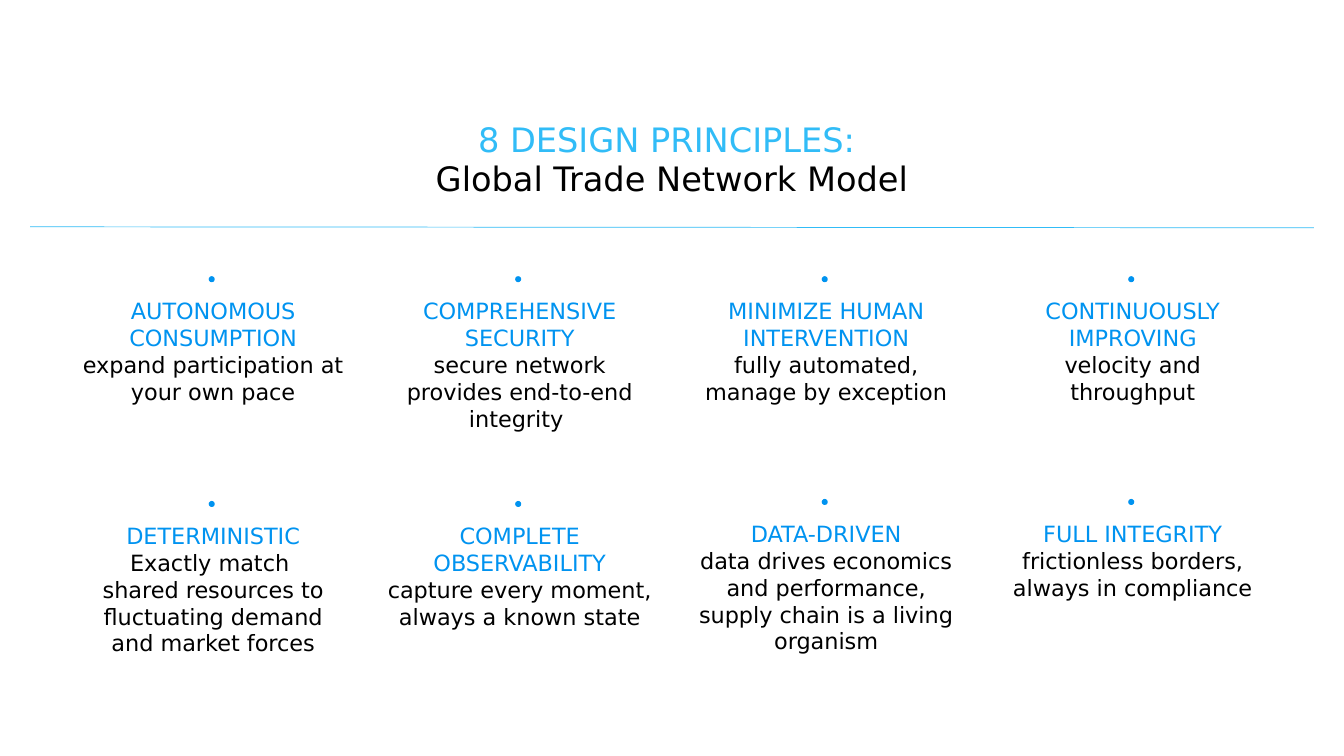
import pptx
import pptx.dml.color
import pptx.enum.shapes
import pptx.enum.text
import pptx.oxml.ns
import pptx.util
from lxml import etree

SKY, BLUE, BLACK, WHITE = "31BCF7", "0093F0", "000000", "FFFFFF"
LEFT, COLUMN_STEP, WIDTH = 70, 304, 283
DOT, DOT_DX, DOT_DY = 6, 137, -16
LINE_HEIGHT, PADDING = 27, 37

ROWS = [
    [
        (290, 3, ["AUTONOMOUS", "CONSUMPTION"], ["expand participation at your own pace"]),
        (290, 4, ["COMPREHENSIVE SECURITY"],
         ["secure network provides end-to-end integrity "]),
        (290, 3, ["MINIMIZE HUMAN INTERVENTION"], ["fully automated, manage by exception"]),
        (290, 3, ["CONTINUOUSLY IMPROVING"], ["velocity and throughput"]),
    ],
    [
        (513, 4, ["DETERMINISTIC"],
         ["Exactly match ", "shared resources to fluctuating demand and market forces"]),
        (513, 4, ["COMPLETE OBSERVABILITY"], ["capture every moment, always a known state"]),
        (511, 4, ["DATA-DRIVEN"],
         ["data drives economics and performance, supply chain is a living organism"]),
        (511, 2, ["FULL INTEGRITY"], ["frictionless borders, always in compliance"]),
    ],
]


def px(n):
    return pptx.util.Emu(n * 9144)


def color(value):
    return pptx.dml.color.RGBColor.from_string(value)


class Deck:
    font = "DejaVu Sans"

    def __init__(self, width, height):
        self.prs = pptx.Presentation()
        self.prs.slide_width, self.prs.slide_height = px(width), px(height)
        self.s = self.prs.slides.add_slide(self.prs.slide_layouts[6])

    def line(self, x1, y1, x2, y2, stroke, width):
        straight = pptx.enum.shapes.MSO_CONNECTOR.STRAIGHT
        c = self.s.shapes.add_connector(straight, px(x1), px(y1), px(x2), px(y2))
        c.line.color.rgb = color(stroke)
        c.line.width = pptx.util.Pt(width)
        etree.SubElement(c._element.spPr, pptx.oxml.ns.qn("a:effectLst"))

    def dot(self, shapes, x, y, size, fill):
        oval = pptx.enum.shapes.MSO_SHAPE.OVAL
        sp = shapes.add_shape(oval, px(x), px(y), px(size), px(size))
        sp.shadow.inherit = False
        sp.fill.solid()
        sp.fill.fore_color.rgb = color(fill)
        sp.line.fill.background()

    def box(self, shapes, x, y, w, h):
        sp = shapes.add_textbox(px(x), px(y), px(w), px(h))
        sp.text_frame.word_wrap = True
        return sp

    def run(self, p, text, size, fill):
        p.alignment = pptx.enum.text.PP_ALIGN.CENTER
        r = p.add_run()
        r.text = text
        r.font.name = self.font
        r.font.size = pptx.util.Pt(size)
        r.font.color.rgb = color(fill)

    def title(self, x, y, w, h, first, second):
        sp = self.box(self.s.shapes, x, y, w, h)
        sp.fill.solid()
        sp.fill.fore_color.rgb = color(WHITE)
        tf = sp.text_frame
        tf.vertical_anchor = pptx.enum.text.MSO_ANCHOR.BOTTOM
        p = tf.paragraphs[0]
        p.line_spacing = 0.95
        self.run(p, first, 24, SKY)
        p.add_line_break()
        self.run(p, second, 24, BLACK)

    def principle(self, shapes, x, y, lines, heading, body):
        sp = self.box(shapes, x, y, WIDTH, PADDING + LINE_HEIGHT * lines - (lines < 4))
        tf = sp.text_frame
        tf.auto_size = pptx.enum.text.MSO_AUTO_SIZE.SHAPE_TO_FIT_TEXT
        texts = [(t, BLUE) for t in heading] + [(t, BLACK) for t in body]
        for i, (text, fill) in enumerate(texts):
            p = tf.add_paragraph() if i else tf.paragraphs[0]
            self.run(p, text, 16, fill)
        self.dot(shapes, x + DOT_DX, y + DOT_DY, DOT, BLUE)


def main():
    deck = Deck(1333, 750)
    deck.line(30, 225, 1303, 226, SKY, 0.5)
    deck.title(0, 27, 1333, 175, "8 DESIGN PRINCIPLES: ", "Global Trade Network Model")
    for row in ROWS:
        group = deck.s.shapes.add_group_shape()
        for column, (top, lines, heading, body) in enumerate(row):
            left = LEFT + COLUMN_STEP * column
            deck.principle(group.shapes, left, top, lines, heading, body)
    deck.prs.save("out.pptx")


if __name__ == "__main__":
    main()
